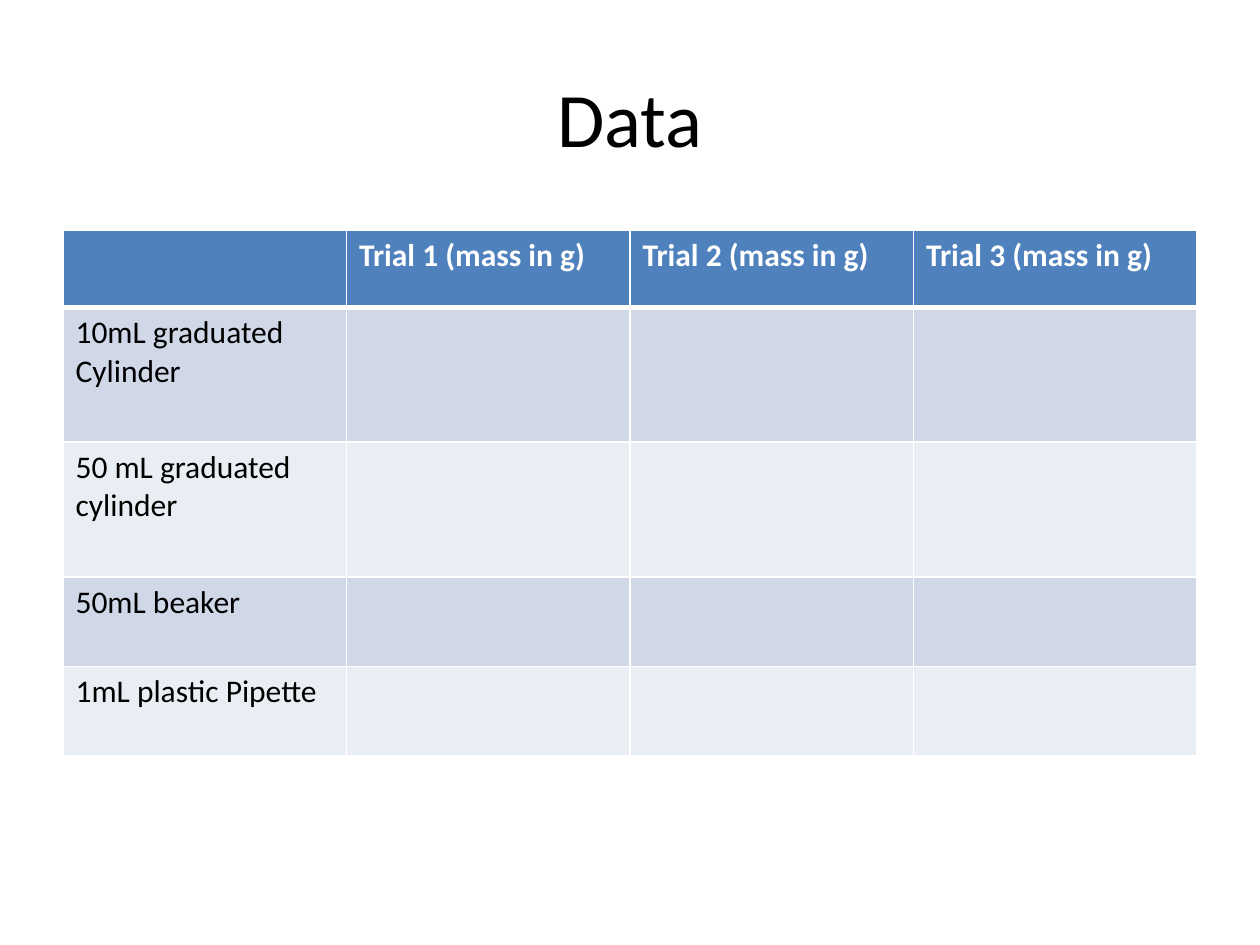
"""Build a slide with a blank data table for glassware mass trials."""
import lxml.etree
import pptx
import pptx.dml.color
import pptx.enum.text
import pptx.oxml.ns
import pptx.util

HEADING = "Data"
TRIALS = ["", "Trial 1 (mass in g)", "Trial 2 (mass in g)", "Trial 3 (mass in g)"]
GLASSWARE = [
    ("10mL graduated Cylinder", 1.07),
    ("50 mL graduated cylinder", 1.07),
    ("50mL beaker", 0.71),
    ("1mL plastic Pipette", 0.71),
]
THEME = {
    "font": "Calibri", "heading_size": 44, "cell_size": 18,
    "ink": "000000", "header_ink": "FFFFFF", "header": "4F81BD",
    "bands": ("D0D8E8", "E9EDF4"), "rule": "FFFFFF",
    "thin": 1, "thick": 3,
}
WIDTH, HEIGHT = 10, 7.5
MARGIN = WIDTH / 20
CONTENT_WIDTH = WIDTH - 2 * MARGIN
HEADING_TOP, HEADING_HEIGHT = HEIGHT * 0.04, HEIGHT / 6
TABLE_TOP, HEADER_HEIGHT = 1.83, 0.61


def rgb(value):
    return pptx.dml.color.RGBColor.from_string(value)


def style(paragraph, size, ink, bold=False):
    font = paragraph.font
    font.name, font.size, font.bold = THEME["font"], pptx.util.Pt(size), bold
    font.color.rgb = rgb(ink)


def add_rule(cell, side, points):
    qn = pptx.oxml.ns.qn
    line = lxml.etree.SubElement(
        cell._tc.get_or_add_tcPr(), qn(f"a:ln{side}"), w=str(pptx.util.Pt(points)))
    fill = lxml.etree.SubElement(line, qn("a:solidFill"))
    lxml.etree.SubElement(fill, qn("a:srgbClr"), val=THEME["rule"])


def add_heading(slide):
    heading = slide.shapes.add_textbox(
        *map(pptx.util.Inches, (MARGIN, HEADING_TOP, CONTENT_WIDTH, HEADING_HEIGHT)))
    frame = heading.text_frame
    frame.word_wrap = True
    frame.vertical_anchor = pptx.enum.text.MSO_ANCHOR.MIDDLE
    frame.text = HEADING
    frame.paragraphs[0].alignment = pptx.enum.text.PP_ALIGN.CENTER
    style(frame.paragraphs[0], THEME["heading_size"], THEME["ink"])


def add_trials(slide):
    rows = [TRIALS] + [[name] + [""] * (len(TRIALS) - 1) for name, _ in GLASSWARE]
    heights = [HEADER_HEIGHT] + [height for _, height in GLASSWARE]
    trials = slide.shapes.add_table(
        len(rows), len(TRIALS),
        *map(pptx.util.Inches, (MARGIN, TABLE_TOP, CONTENT_WIDTH, sum(heights)))).table
    for row, height in zip(trials.rows, heights):
        row.height = pptx.util.Inches(height)
    for r, texts in enumerate(rows):
        header = r == 0
        band = THEME["header"] if header else THEME["bands"][(r - 1) % 2]
        ink = THEME["header_ink"] if header else THEME["ink"]
        thick_side = {0: "B", 1: "T"}.get(r)
        for c, text in enumerate(texts):
            cell = trials.cell(r, c)
            cell.text = text
            style(cell.text_frame.paragraphs[0], THEME["cell_size"], ink, header)
            for side in "LRTB":
                add_rule(cell, side, THEME["thick" if side == thick_side else "thin"])
            cell.fill.solid()
            cell.fill.fore_color.rgb = rgb(band)


def main():
    deck = pptx.Presentation()
    deck.slide_width = pptx.util.Inches(WIDTH)
    deck.slide_height = pptx.util.Inches(HEIGHT)
    slide = deck.slides.add_slide(deck.slide_layouts[6])
    add_heading(slide)
    add_trials(slide)
    deck.save("out.pptx")


if __name__ == "__main__":
    main()
